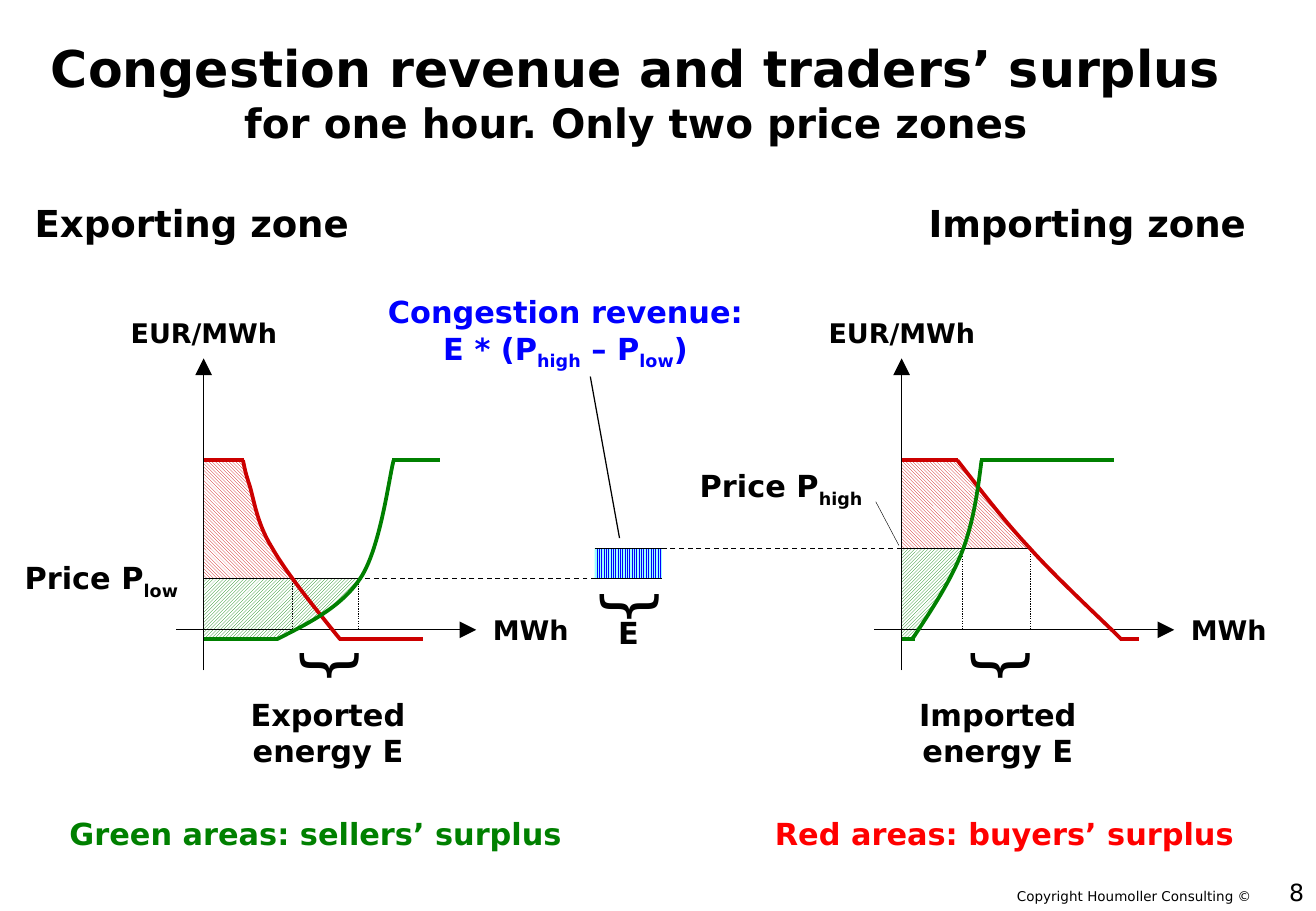
from dataclasses import dataclass
from typing import Optional

from lxml import etree
from pptx import Presentation, util as u
from pptx.dml.color import RGBColor
from pptx.enum import dml, shapes, text
from pptx.oxml.ns import qn

FONT = "DejaVu Sans"
HUES = {"black": "000000", "red": "CC0000", "pure": "FF0000",
        "green": "008000", "blue": "0000FF", "cyan": "99FFFF", "white": "FFFFFF"}
DOT, DASH = dml.MSO_LINE.ROUND_DOT, dml.MSO_LINE.DASH
UP = dml.MSO_PATTERN.LIGHT_UPWARD_DIAGONAL
DOWN = dml.MSO_PATTERN.LIGHT_DOWNWARD_DIAGONAL
BARS = dml.MSO_PATTERN.NARROW_VERTICAL
MID, RIGHT = text.PP_ALIGN.CENTER, text.PP_ALIGN.RIGHT

# Price levels, top to bottom, and the two price axes
TOP, HIGH, LOW, BASE, FLOOR = 272.8, 325.2, 342.9, 373.3, 378.9
LEFT_X, RIGHT_X = 120.7, 534.4

Point = tuple[float, float]


@dataclass
class Label:
    words: str  # parts between underscores are subscripts
    x: float
    y: float
    w: float
    h: float
    size: float = 18
    hue: str = "black"
    bold: bool = True
    align: text.PP_ALIGN = MID
    turn: float = 0
    wrap: bool = False
    anchor: text.MSO_ANCHOR = text.MSO_ANCHOR.TOP


@dataclass
class Line:
    x1: float
    y1: float
    x2: float
    y2: float
    hue: str = "black"
    width: float = 0.75
    dash: Optional[dml.MSO_LINE] = None
    tip: bool = False


@dataclass
class Area:
    points: list[Point]
    hue: str
    weave: dml.MSO_PATTERN


@dataclass
class Curve:
    hue: str
    nodes: list[Point]  # start, then two handles and an end per section
    flats: list[tuple[float, float, float]]  # x from, x to, y


def color(hue: str) -> RGBColor:
    return RGBColor.from_string(HUES[hue])


def style(para, size: float, hue: str, bold: bool, align) -> None:
    para.alignment = align
    para.font.name, para.font.size, para.font.bold = FONT, u.Pt(size), bold
    para.font.color.rgb = color(hue)


def write(slide, lab: Label) -> None:
    box = slide.shapes.add_textbox(*map(u.Pt, (lab.x, lab.y, lab.w, lab.h)))
    box.rotation = lab.turn
    frame = box.text_frame
    frame.word_wrap = lab.wrap
    frame.vertical_anchor = lab.anchor
    for row, words in enumerate(lab.words.split("\n")):
        para = frame.add_paragraph() if row else frame.paragraphs[0]
        style(para, lab.size, lab.hue, lab.bold, lab.align)
        for part, piece in enumerate(words.split("_")):
            if piece:
                run = para.add_run()
                run.text = piece
                if part % 2:
                    run._r.get_or_add_rPr().set("baseline", "-25000")


def draw(slide, line: Line) -> None:
    ends = map(u.Pt, (line.x1, line.y1, line.x2, line.y2))
    link = slide.shapes.add_connector(shapes.MSO_CONNECTOR.STRAIGHT, *ends)
    link.line.color.rgb = color(line.hue)
    link.line.width = u.Pt(line.width)
    if line.dash:
        link.line.dash_style = line.dash
    props = link._element.spPr
    if line.tip:
        etree.SubElement(props.find(qn("a:ln")), qn("a:tailEnd"),
                         type="triangle", w="lg", len="lg")
    etree.SubElement(props, qn("a:effectLst"))


def trace(slide, points: list[Point], close: bool):
    spots = [(u.Pt(x), u.Pt(y)) for x, y in points]
    form = slide.shapes.build_freeform(*spots[0], scale=1.0)
    form.add_line_segments(spots[1:], close=close)
    shape = form.convert_to_shape()
    shape.shadow.inherit = False
    return shape


def weave(shape, kind: dml.MSO_PATTERN, front: str, back: str) -> None:
    shape.fill.patterned()
    shape.fill.pattern = kind
    shape.fill.fore_color.rgb = color(front)
    shape.fill.back_color.rgb = color(back)
    shape.line.fill.background()


def bend(shape) -> None:
    """Turn each three straight segments into one cubic Bezier section."""
    route = shape._element.find(".//" + qn("a:path"))
    legs = route.findall(qn("a:lnTo"))
    for trio in zip(legs[::3], legs[1::3], legs[2::3]):
        arc = etree.Element(qn("a:cubicBezTo"))
        route.replace(trio[0], arc)
        for leg in trio:
            arc.append(leg[0])
        for leg in trio[1:]:
            route.remove(leg)


def plot(slide, curve: Curve) -> None:
    for x1, x2, y in curve.flats:
        draw(slide, Line(x1, y, x2, y, curve.hue, 2.25))
    shape = trace(slide, curve.nodes, False)
    bend(shape)
    shape.fill.background()
    shape.line.color.rgb = color(curve.hue)
    shape.line.width = u.Pt(2.25)


def brace(x: float, y: float) -> Label:
    return Label("}", x, y, 28.8, 53.3, 38, bold=False, turn=90, wrap=True)


AREAS = [
    Area([(RIGHT_X, HIGH), (571, HIGH), (553.7, 358.6), (540.7, FLOOR),
          (RIGHT_X, FLOOR)], "green", UP),
    Area([(RIGHT_X, TOP), (568.1, TOP), (587.5, 298.8), (609.8, HIGH),
          (RIGHT_X, HIGH)], "red", DOWN),
    Area([(LEFT_X, LOW), (213.1, LOW), (198, 359.3), (179.3, 370.8),
          (162.7, FLOOR), (LEFT_X, FLOOR)], "green", UP),
    Area([(LEFT_X, TOP), (LEFT_X, LOW), (172.8, LOW), (156.2, 316.1),
          (149.8, 293.8), (144, TOP)], "red", DOWN),
]
CURVES = [
    Curve("red", [(144, TOP), (144.7, 275), (144.7, 277.9), (147.6, 286.6),
                  (150.5, 295.2), (151.9, 309.6), (161.3, 324.7),
                  (169.9, 339.8), (185.8, 359.3), (201.6, FLOOR)],
          [(LEFT_X, 144.7, TOP), (200.9, 250.6, FLOOR)]),
    Curve("green", [(164.2, FLOOR), (182.9, 369.4), (202.3, 360), (213.8, 342.5),
                    (225.4, 324.7), (230.4, 284.4), (233.3, TOP)],
          [(LEFT_X, 164.9, FLOOR), (232.6, 260.6, TOP)]),
    Curve("red", [(567.4, TOP), (581, 290.2), (594, 307.4), (610.6, HIGH),
                  (626.4, LOW), (655.9, 370.1), (664.6, FLOOR)],
          [(RIGHT_X, 568.1, TOP), (663.8, 675.4, FLOOR)]),
    Curve("green", [(540.7, FLOOR), (552.2, 361.4), (563.8, 344.2), (571, HIGH),
                    (577.4, 307.4), (579.6, 290.2), (581.8, TOP)],
          [(RIGHT_X, 542.2, FLOOR), (581, 660.2, TOP)]),
]
LINES = [
    Line(LEFT_X, LOW, 213.1, LOW), Line(RIGHT_X, HIGH, 611, HIGH),
    Line(389.5, LOW, 204.5, LOW, dash=DASH), Line(RIGHT_X, HIGH, 389.5, HIGH, dash=DASH),
    Line(352.4, LOW, 392.4, LOW), Line(352.4, HIGH, 392.4, HIGH),
    Line(349.9, 223.2, 367.2, 319), Line(519.1, 297.4, 532.8, 323.3, width=0.25),
]
LINES += [Line(x, y, x, BASE, dash=DOT)
          for x, y in ((173.5, LOW), (212.4, LOW), (570.6, HIGH), (610.6, HIGH))]
LABELS = [
    Label("Price P_low_", 5, 328, 110.2, 28.8),
    Label("Price P_high_", 405.4, 273.6, 115.2, 28.8),
    Label("Exporting zone", 12.5, 115.2, 202.3, 33.8, 22),
    Label("Importing zone", 540.7, 115.2, 207.4, 33.8, 22),
    Label("Exported\nenergy E", 141.1, 409, 106.6, 51.1),
    Label("Imported\nenergy E", 536, 409, 110.9, 51.1),
    Label("Congestion revenue:\nE * (P_high_ – P_low_)", 222.5, 170.4, 225.4, 51.1,
          hue="blue"),
    Label("E", 359.3, 360.7, 26.6, 28.8),
    Label("Green areas: sellers’ surplus", 33.8, 479.5, 306.7, 28.8, hue="green"),
    Label("Red areas: buyers’ surplus", 452, 479.5, 286.6, 28.8, hue="pure"),
    Label("Copyright Houmoller Consulting ©", 594.6, 522.7, 155.5, 17.3, 8, bold=False),
    Label("8", 617.4, 510.5, 162.7, 36, 14, bold=False, align=RIGHT, wrap=True,
          anchor=text.MSO_ANCHOR.MIDDLE),
    brace(184.3, 363.6), brace(582.5, 363.2), brace(362.2, 328.3),
]
# Axes and their units, alike in both zones
for x in (LEFT_X, RIGHT_X):
    LINES += [Line(x, 397.4, x, 212.4, tip=True),
              Line(x - 16.2, BASE, x + 161.6, BASE, tip=True)]
    LABELS += [Label("EUR/MWh", x - 53.5, 184, 107.3, 26.6, 16),
               Label("MWh", x + 164, 360, 59.8, 26.6, 16)]


def main() -> None:
    deck = Presentation()
    deck.slide_width, deck.slide_height = u.Pt(780), u.Pt(540)
    slide = deck.slides.add_slide(deck.slide_layouts[5])

    # Title
    title = slide.shapes.title
    title.left, title.top, title.width, title.height = map(u.Pt, (-2.9, 9.2, 759.6, 90))
    title.text_frame.auto_size = text.MSO_AUTO_SIZE.NONE
    title.text_frame.vertical_anchor = text.MSO_ANCHOR.MIDDLE
    head = title.text_frame.paragraphs[0]
    style(head, 30, "black", True, MID)
    head.add_run().text = "Congestion revenue and traders’ surplus"
    head.add_line_break()
    sub = head.add_run()
    sub.text = "for one hour. Only two price zones"
    sub.font.size = u.Pt(24)

    # Surplus areas and congestion revenue
    for area in AREAS:
        weave(trace(slide, area.points, True), area.weave, area.hue, "white")
    gain = slide.shapes.add_shape(shapes.MSO_SHAPE.RECTANGLE,
                                  *map(u.Pt, (352.4, HIGH, 40, LOW - HIGH)))
    gain.shadow.inherit = False
    weave(gain, BARS, "blue", "cyan")

    # Axes, guides, curves and text
    for line in LINES:
        draw(slide, line)
    for curve in CURVES:
        plot(slide, curve)
    for label in LABELS:
        write(slide, label)
    deck.save("out.pptx")


if __name__ == "__main__":
    main()
